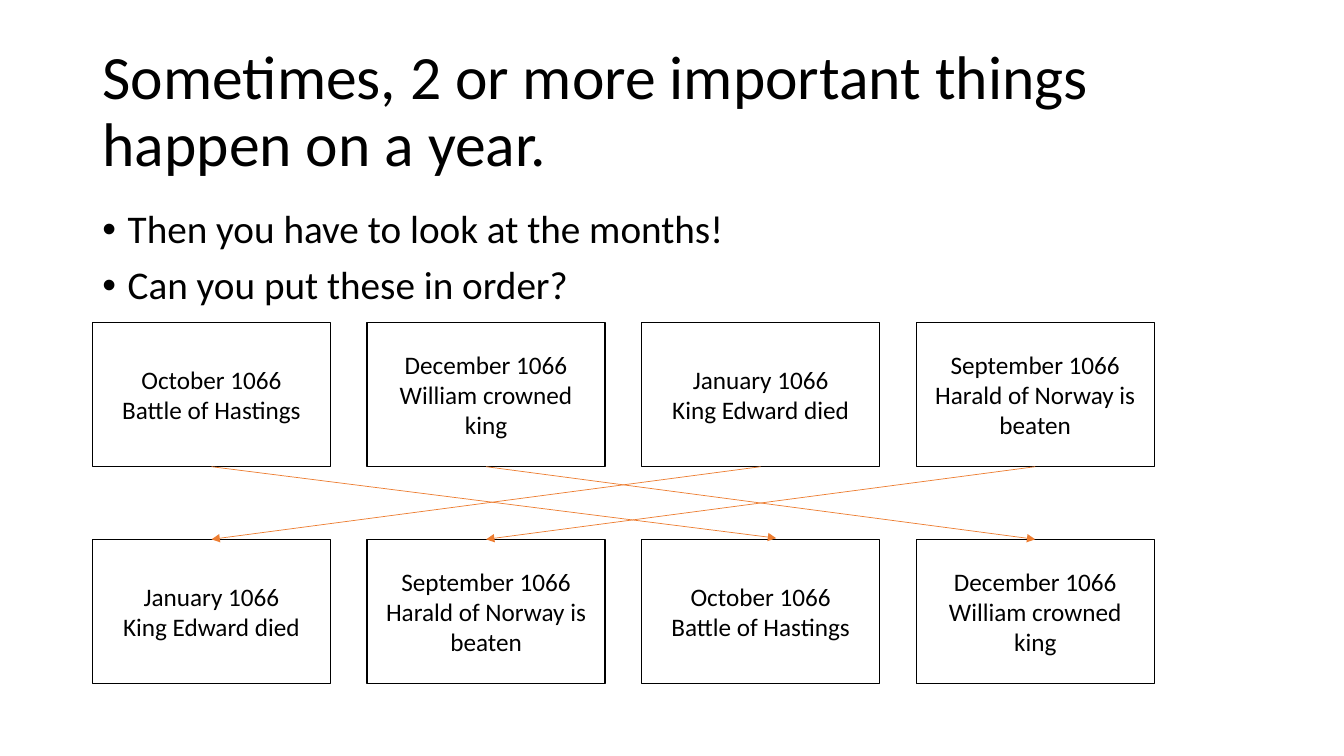
"""Build the slide on ordering the events of 1066 by month."""
from dataclasses import dataclass
from typing import Optional

from lxml.etree import SubElement
from pptx import Presentation
from pptx.dml.color import RGBColor
from pptx.enum.shapes import MSO_CONNECTOR as Connector, MSO_SHAPE as Shape
from pptx.enum.text import MSO_ANCHOR as Anchor, MSO_AUTO_SIZE as AutoSize, PP_ALIGN as Align
from pptx.oxml.ns import qn
from pptx.util import Cm, Pt

BLACK = RGBColor(0x00, 0x00, 0x00)
WHITE = RGBColor(0xFF, 0xFF, 0xFF)
ORANGE = RGBColor(0xED, 0x7D, 0x31)
FONT = "Calibri"
LEFT, PITCH = 2.33, 6.92
CARD_WIDTH, CARD_HEIGHT = 6.0, 3.63
SHUFFLED_TOP, ORDERED_TOP = 8.13, 13.59
BOTTOM_SITE, TOP_SITE = 2, 0


@dataclass(frozen=True)
class Event:
    month: str
    happening: str


@dataclass(frozen=True)
class Move:
    start: int
    end: int
    loose_tip: Optional[tuple[float, float]] = None


HASTINGS = Event("October 1066", "Battle of Hastings")
CROWNING = Event("December 1066", "William crowned king")
EDWARD = Event("January 1066", "King Edward died")
HARALD = Event("September 1066", "Harald of Norway is beaten")
SHUFFLED = [HASTINGS, CROWNING, EDWARD, HARALD]
ORDERED = [EDWARD, HARALD, HASTINGS, CROWNING]
MOVES = [Move(2, 0), Move(3, 1), Move(0, 2, (19.56, 13.56)), Move(1, 3)]
PROMPTS = ["Then you have to look at the months!", "Can you put these in order?"]


def style(paragraph, size: float, align=Align.LEFT) -> None:
    """Set the font and alignment of a paragraph."""
    paragraph.alignment = align
    paragraph.font.name = FONT
    paragraph.font.size = Pt(size)
    paragraph.font.color.rgb = BLACK


def add_heading(slide, text: str) -> None:
    """Place and format the title."""
    heading = slide.shapes.title
    heading.left, heading.top = Cm(LEFT), Cm(1.01)
    heading.width, heading.height = Cm(29.21), Cm(3.68)
    frame = heading.text_frame
    frame.text = text
    frame.auto_size = AutoSize.NONE
    frame.vertical_anchor = Anchor.MIDDLE
    frame.paragraphs[0].line_spacing = 0.9
    style(frame.paragraphs[0], 44)


def add_prompts(slide, prompts: list[str]) -> None:
    """Add the bulleted prompts."""
    frame = slide.shapes.add_textbox(Cm(LEFT), Cm(5.16), Cm(29.21), Cm(2.9)).text_frame
    frame.word_wrap = True
    frame.text = "\n".join(prompts)
    for index, prompt in enumerate(frame.paragraphs):
        properties = prompt._p.get_or_add_pPr()
        properties.set("marL", str(Cm(0.64)))
        properties.set("indent", str(Cm(-0.64)))
        SubElement(properties, qn("a:buFont"), typeface="Arial")
        SubElement(properties, qn("a:buChar"), char="•")
        prompt.line_spacing = 0.9
        if index:
            prompt.space_before = Pt(10)
        style(prompt, 28)


def add_card(slide, event: Event, column: int, top: float):
    """Add one event card and return it."""
    card = slide.shapes.add_shape(Shape.RECTANGLE, Cm(LEFT + column * PITCH), Cm(top),
                                  Cm(CARD_WIDTH), Cm(CARD_HEIGHT))
    card.shadow.inherit = False
    card.fill.solid()
    card.fill.fore_color.rgb = WHITE
    card.line.color.rgb = BLACK
    card.line.width = Pt(1)
    frame = card.text_frame
    frame.word_wrap = True
    frame.vertical_anchor = Anchor.MIDDLE
    frame.text = f"{event.month}\n{event.happening}"
    for paragraph in frame.paragraphs:
        style(paragraph, 18, Align.CENTER)
    return card


def add_arrow(slide, move: Move, shuffled: list, ordered: list) -> None:
    """Draw an arrow from a shuffled card to its place in order."""
    tip_x, tip_y = move.loose_tip or (0, 0)
    arrow = slide.shapes.add_connector(Connector.STRAIGHT, 0, 0, Cm(tip_x), Cm(tip_y))
    arrow.begin_connect(shuffled[move.start], BOTTOM_SITE)
    if move.loose_tip is None:
        arrow.end_connect(ordered[move.end], TOP_SITE)
    arrow.line.color.rgb = ORANGE
    arrow.line.width = Pt(0.5)
    SubElement(arrow.line._get_or_add_ln(), qn("a:tailEnd"), type="triangle")
    SubElement(arrow._element.spPr, qn("a:effectLst"))


def main() -> None:
    """Build and save the slide."""
    deck = Presentation()
    deck.slide_width, deck.slide_height = Cm(33.87), Cm(19.05)
    slide = deck.slides.add_slide(deck.slide_layouts[5])
    add_heading(slide, "Sometimes, 2 or more important things happen on a year.")
    add_prompts(slide, PROMPTS)
    shuffled = [add_card(slide, event, column, SHUFFLED_TOP)
                for column, event in enumerate(SHUFFLED)]
    ordered = [add_card(slide, event, column, ORDERED_TOP)
               for column, event in enumerate(ORDERED)]
    for move in MOVES:
        add_arrow(slide, move, shuffled, ordered)
    deck.save("out.pptx")


if __name__ == "__main__":
    main()
